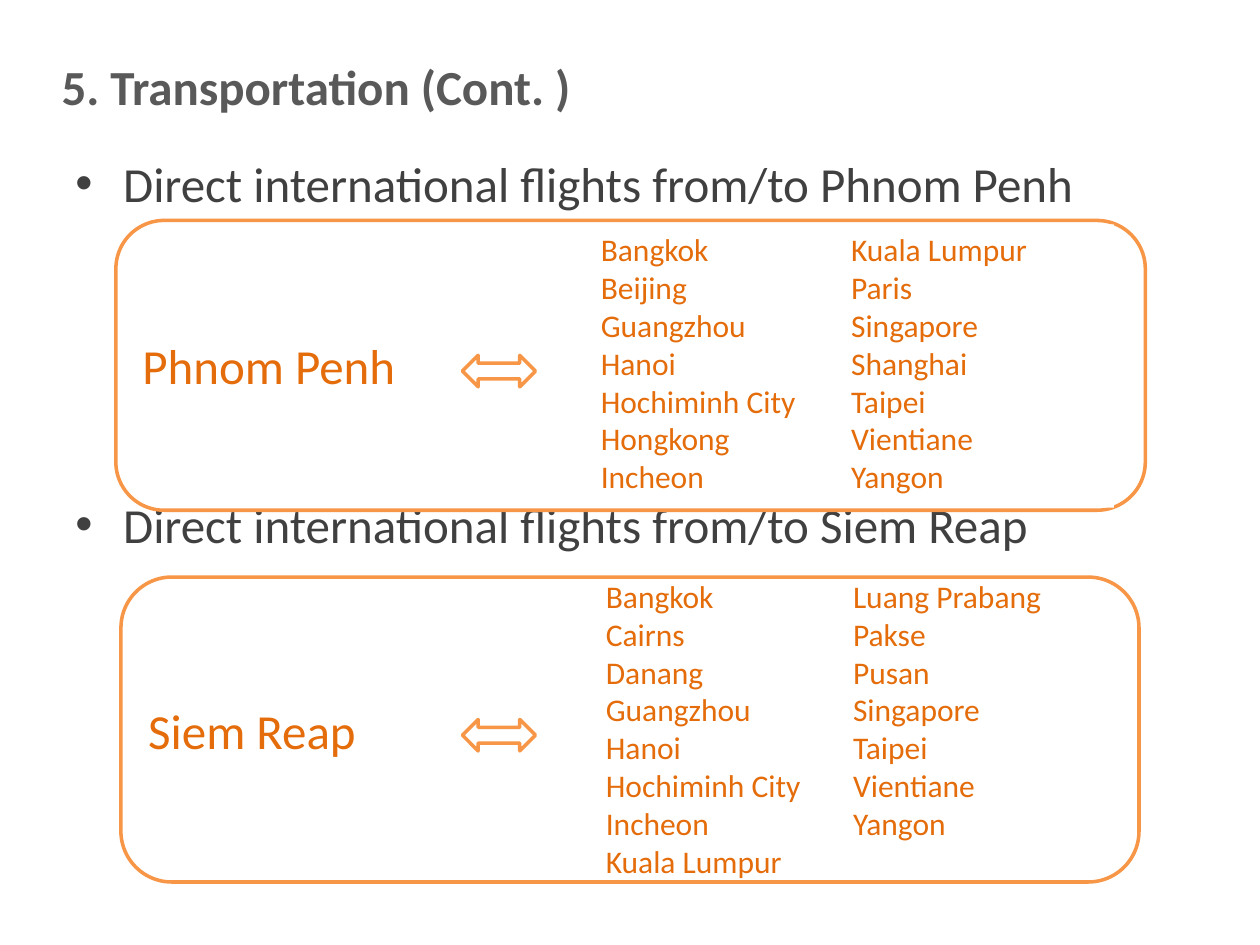
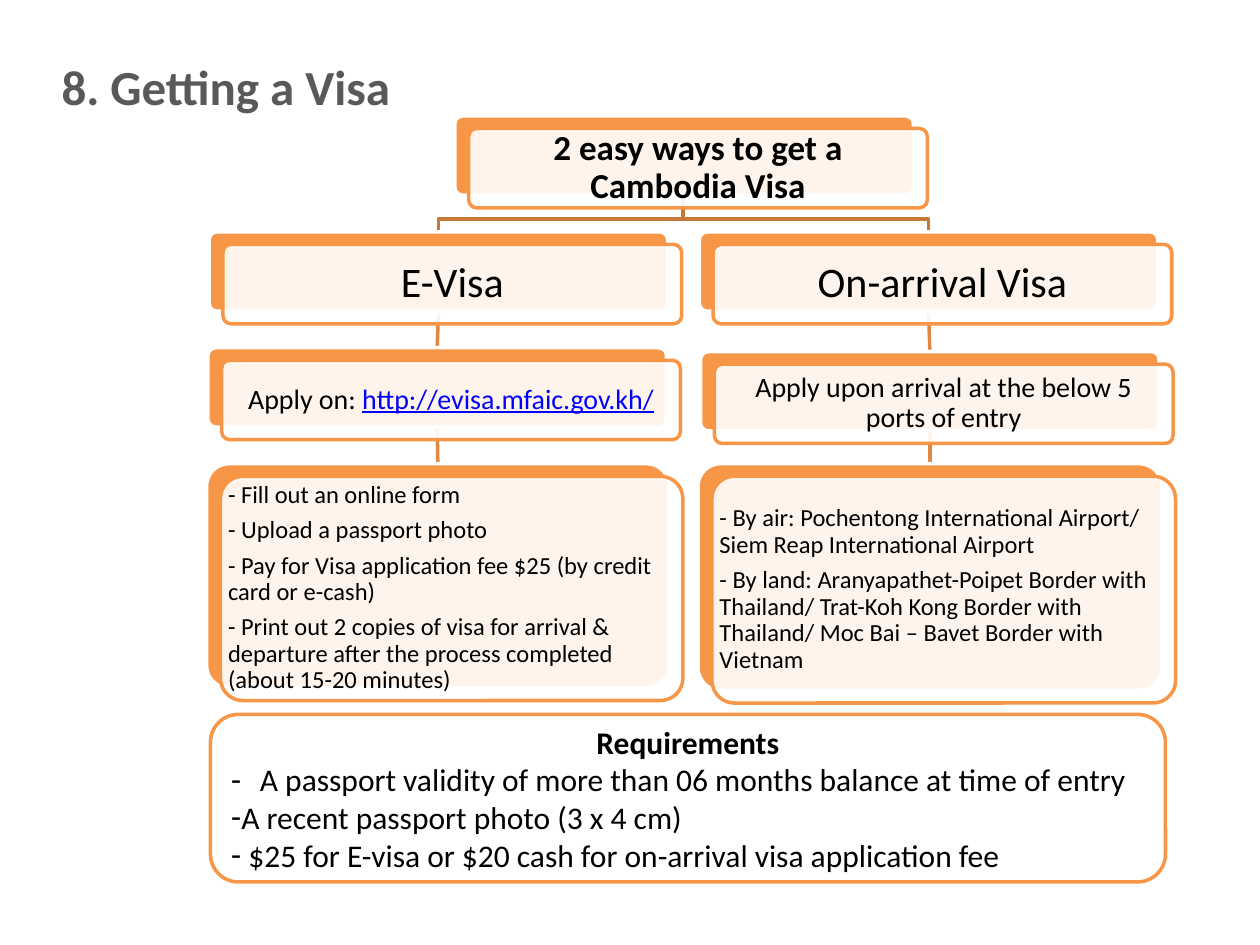
from lxml import etree
from pptx import Presentation
from pptx.dml.color import RGBColor
from pptx.enum.shapes import MSO_CONNECTOR, MSO_SHAPE
from pptx.enum.text import MSO_ANCHOR, PP_ALIGN
from pptx.oxml.ns import qn
from pptx.util import Inches, Pt

FONT = "Calibri"
WHITE = RGBColor(0xFF, 0xFF, 0xFF)
BLACK = RGBColor(0, 0, 0)
ORANGE = RGBColor(0xF7, 0x96, 0x46)
DARK_ORANGE = RGBColor(0xE4, 0x6C, 0x0A)
TRUNK = RGBColor(0xC6, 0x78, 0x38)
BRANCH = RGBColor(0xE0, 0x88, 0x40)
TITLE_GREY = RGBColor(0x59, 0x59, 0x59)
BODY_GREY = RGBColor(0x40, 0x40, 0x40)
LINK_BLUE = RGBColor(0, 0, 0xFF)

CARD_W, CARD_H = 3.64, 0.63
CARD_OFFSET = 0.1
CARD_CORNER = 0.1

PHNOM_PENH = ["Bangkok", "Beijing", "Guangzhou", "Hanoi", "Hochiminh City",
              "Hongkong", "Incheon", "Kuala Lumpur", "Paris", "Singapore",
              "Shanghai", "Taipei", "Vientiane", "Yangon"]
SIEM_REAP = ["Bangkok", "Cairns", "Danang", "Guangzhou", "Hanoi",
             "Hochiminh City", "Incheon", "Kuala Lumpur", "Luang Prabang",
             "Pakse", "Pusan", "Singapore", "Taipei", "Vientiane", "Yangon"]


def style(font, size, color, bold=False):
    font.name, font.size, font.bold = FONT, Pt(size), bold
    font.color.rgb = color


def write(s, lines, size, color, bold=False, align=PP_ALIGN.LEFT,
          anchor=MSO_ANCHOR.MIDDLE):
    """Fill a shape with one paragraph per line and return the paragraphs."""
    tf = s.text_frame
    tf.word_wrap = True
    tf.vertical_anchor = anchor
    tf.text = "\n".join(lines)
    for p in tf.paragraphs:
        p.alignment = align
        for r in p.runs:
            style(r.font, size, color, bold)
    return tf.paragraphs


def add_bullet(p, char, indent=0.0):
    pPr = p._p.get_or_add_pPr()
    pPr.set("marL", str(Inches(indent)))
    pPr.set("indent", str(-Inches(indent)))
    font = etree.SubElement(pPr, qn("a:buFont"))
    font.set("typeface", "Arial")
    etree.SubElement(pPr, qn("a:buChar")).set("char", char)


def add_box(slide, left, top, width, height, kind=MSO_SHAPE.ROUNDED_RECTANGLE,
            fill=WHITE, line=ORANGE):
    s = slide.shapes.add_shape(kind, Inches(left), Inches(top),
                               Inches(width), Inches(height))
    s.shadow.inherit = False
    s.fill.solid()
    s.fill.fore_color.rgb = fill
    if line is None:
        s.line.fill.background()
    else:
        s.line.color.rgb = line
        s.line.width = Pt(2)
    return s


def add_text(slide, left, top, width, height):
    return slide.shapes.add_textbox(Inches(left), Inches(top),
                                    Inches(width), Inches(height))


def add_slide(prs, title):
    slide = prs.slides.add_slide(prs.slide_layouts[6])
    write(add_text(slide, 0.39, 0.06, 9, 1.25), [title], 28, TITLE_GREY, True)
    return slide


def add_route(slide, frame, city, list_frame, destinations):
    """City, double arrow and its destinations in two columns."""
    write(add_box(slide, *frame), [city], 28, DARK_ORANGE)
    middle = frame[1] + frame[3] / 2
    add_box(slide, 3.67, middle - 0.08, 0.58, 0.25, MSO_SHAPE.LEFT_RIGHT_ARROW)
    s = add_box(slide, *list_frame, kind=MSO_SHAPE.RECTANGLE, line=None)
    s.fill.background() if list_frame[1] < frame[1] else s.fill.solid()
    write(s, destinations, 18, DARK_ORANGE, anchor=MSO_ANCHOR.TOP)
    s.text_frame._txBody.bodyPr.set("numCol", "2")


def add_card(slide, left, top, lines, size, pad, width=CARD_W, height=CARD_H,
             bold=False, align=PP_ALIGN.CENTER):
    """Translucent card over an orange one; returns the back card and paragraphs."""
    back = add_box(slide, left, top, width, height, fill=ORANGE, line=WHITE)
    front = add_box(slide, left + CARD_OFFSET + 0.01, top + CARD_OFFSET,
                    width, height)
    color = front.element.spPr.find(qn("a:solidFill") + "/" + qn("a:srgbClr"))
    etree.SubElement(color, qn("a:alpha")).set("val", "90000")
    for s in (back, front):
        s.adjustments[0] = CARD_CORNER
    tf = front.text_frame
    # A rounded rectangle already insets its text by 0.29 of the corner radius.
    inset = Inches(pad - 0.29 * CARD_CORNER * height)
    tf.margin_left = tf.margin_right = tf.margin_top = tf.margin_bottom = inset
    paragraphs = write(front, lines, size, BLACK, bold, align)
    for p in paragraphs:
        p.line_spacing = 0.9
        p.space_after = Pt(round(0.35 * size))
    return back, paragraphs


def add_trunk(slide, start_x, end_x):
    fb = slide.shapes.build_freeform(Inches(start_x), Inches(1.55))
    fb.add_line_segments([(Inches(x), Inches(y)) for x, y in
                          ((start_x, 1.74), (end_x, 1.74), (end_x, 1.84))],
                         close=False)
    s = fb.convert_to_shape()
    s.shadow.inherit = False
    s.fill.background()
    s.line.color.rgb = TRUNK
    s.line.width = Pt(2)


def add_branch(slide):
    c = slide.shapes.add_connector(MSO_CONNECTOR.STRAIGHT, 0, 0, 0, 0)
    c.line.color.rgb = BRANCH
    c.line.width = Pt(2)
    etree.SubElement(c._element.spPr, qn("a:effectLst"))
    return c


def join_column(branches, cards):
    for c, upper, lower in zip(branches, cards, cards[1:]):
        c.begin_connect(upper, 2)
        c.end_connect(lower, 0)


def build_transportation(prs):
    slide = add_slide(prs, "5. Transportation (Cont. )")
    paragraphs = write(add_text(slide, 0.5, 1.17, 9, 5.53),
                       ["Direct international flights from/to Phnom Penh",
                        "Direct international flights from/to Siem Reap"],
                       28, BODY_GREY, anchor=MSO_ANCHOR.TOP)
    paragraphs[1].space_before = Pt(161)
    for p in paragraphs:
        add_bullet(p, "•", 0.38)
    add_route(slide, (0.92, 1.75, 8.17, 2.3), "Phnom Penh",
              (4.67, 1.78, 4.17, 2.25), PHNOM_PENH)
    add_route(slide, (0.96, 4.58, 8.08, 2.42), "Siem Reap",
              (4.71, 4.53, 4.12, 2.56), SIEM_REAP)


def build_visa(prs):
    slide = add_slide(prs, "8. Getting a Visa")
    for x in (3.48, 7.37):
        add_trunk(slide, 5.42, x)
    # Lines come first so that they lie behind the cards.
    evisa_branches = [add_branch(slide) for _ in range(2)]
    arrival_branches = [add_branch(slide) for _ in range(2)]

    add_card(slide, 3.61, 0.92, ["2 easy ways to get a Cambodia Visa"], 20,
             0.08, bold=True)

    evisa, _ = add_card(slide, 1.66, 1.84, ["E-Visa"], 24, 0.1)
    apply_on, paragraphs = add_card(slide, 1.65, 2.76, ["Apply on: "], 16, 0.07)
    r = paragraphs[0].add_run()
    r.text = "http://evisa.mfaic.gov.kh/"
    style(r.font, 16, LINK_BLUE)
    r.font.underline = True
    steps, _ = add_card(
        slide, 1.64, 3.68,
        ["- Fill out an online form",
         "- Upload a passport photo",
         "- Pay for Visa application fee $25 (by credit card or e-cash)",
         "- Print out 2 copies of visa for arrival & departure after the "
         "process completed (about 15-20 minutes)"],
        14, 0.06, 3.67, 1.78, align=PP_ALIGN.LEFT)
    join_column(evisa_branches, [evisa, apply_on, steps])

    arrival, _ = add_card(slide, 5.55, 1.84, ["On-arrival Visa"], 24, 0.1)
    apply_at, _ = add_card(slide, 5.56, 2.79,
                           ["Apply upon arrival at the below 5 ports of entry"],
                           16, 0.07)
    ports, _ = add_card(
        slide, 5.54, 3.68,
        ["- By air: Pochentong International Airport/ Siem Reap "
         "International Airport",
         "- By land: Aranyapathet-Poipet Border with Thailand/ Trat-Koh Kong "
         "Border with Thailand/ Moc Bai – Bavet Border with Vietnam"],
        14, 0.06, 3.68, 1.8, align=PP_ALIGN.LEFT)
    join_column(arrival_branches, [arrival, apply_at, ports])

    heading, *items = write(
        add_box(slide, 1.67, 5.67, 7.58, 1.33),
        ["Requirements",
         "A passport validity of more than 06 months balance at time of entry",
         "A recent passport photo (3 x 4 cm)",
         " $25 for E-visa or $20 cash for on-arrival visa application fee"],
        18, BLACK)
    heading.alignment = PP_ALIGN.CENTER
    heading.runs[0].font.bold = True
    for p, indent in zip(items, (0.23, 0, 0)):
        add_bullet(p, "-", indent)


def main():
    prs = Presentation()
    prs.slide_width, prs.slide_height = Inches(10), Inches(7.5)
    build_transportation(prs)
    build_visa(prs)
    prs.save("out.pptx")


if __name__ == "__main__":
    main()
